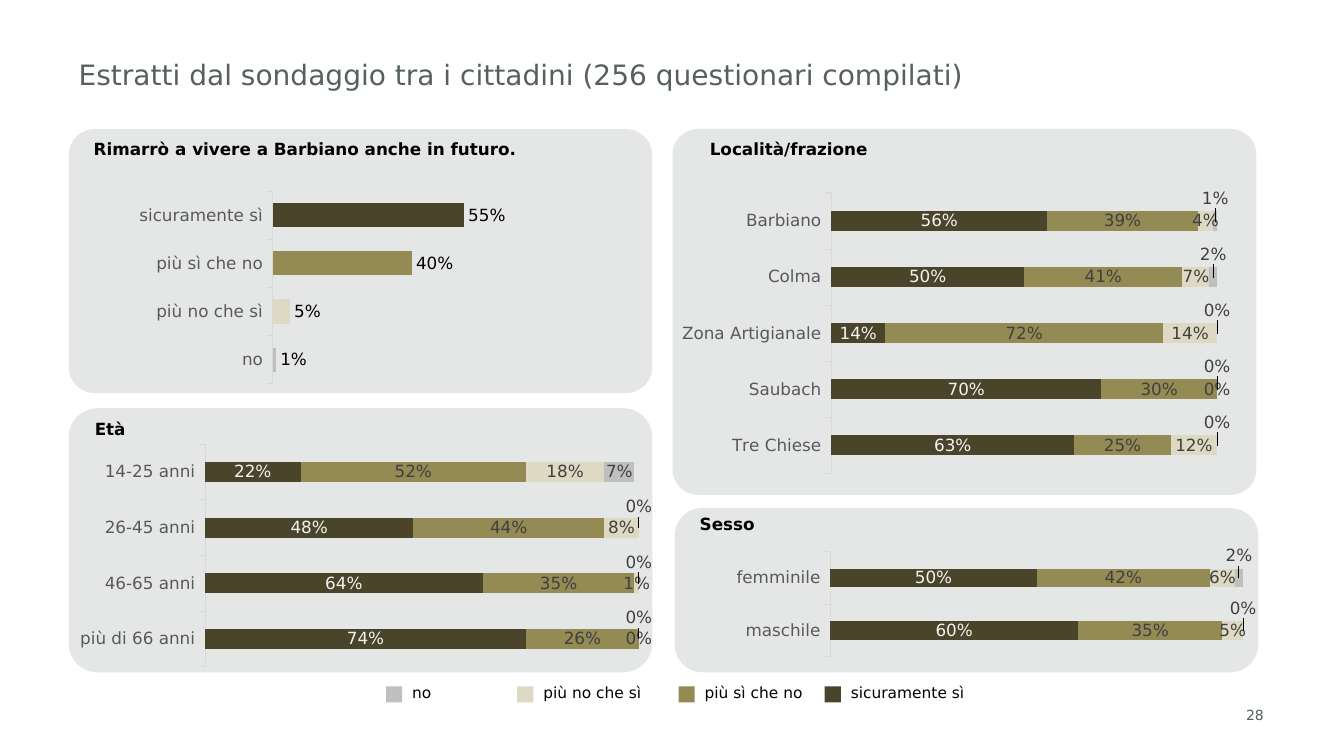
"""Builds the slide with the results of the citizens' survey."""
from dataclasses import dataclass

from lxml import etree
from pptx import Presentation
from pptx import util as u
from pptx.chart.data import CategoryChartData
from pptx.dml.color import RGBColor
from pptx.enum import chart as ch, shapes, text
from pptx.oxml import parse_xml
from pptx.oxml.ns import nsdecls, qn


@dataclass(frozen=True)
class Theme:
    """Colours, type sizes and grid unit of the slide."""
    font: str = "DejaVu Sans"
    slate: str = "56615A"
    black: str = "000000"
    axis_text: str = "595959"
    axis_line: str = "D9D9D9"
    light_label: str = "F2F2F2"
    dark_label: str = "404040"
    title: int = 20
    body: int = 12
    legend: int = 11
    small: int = 10
    cell: int = u.Inches(0.1)
    label_lift: float = 2.1


THEME = Theme()
ANSWERS = {"sicuramente sì": "4A452A", "più sì che no": "948A54",
           "più no che sì": "DDD9C3", "no": "BFBFBF"}


def grid(*cells):
    """Turn grid columns and rows into lengths."""
    return [u.Emu(round(count * THEME.cell)) for count in cells]


def style(font, size, color, bold=None):
    """Apply the theme's typeface with a size and a colour."""
    font.name, font.size, font.bold = THEME.font, u.Pt(size), bold
    font.color.rgb = RGBColor.from_string(color)


def write(frame, words, size, color, bold=None):
    """Write one run into the first paragraph of a frame."""
    span = frame.paragraphs[0].add_run()
    span.text = words
    style(span.font, size, color, bold)


def add_text(page, area, words, size, color, bold=None, inset=True, wrap=True):
    """Add a text box and return its frame."""
    frame = page.shapes.add_textbox(*grid(*area)).text_frame
    frame.word_wrap = wrap
    if not inset:
        frame.margin_left = frame.margin_right = frame.margin_top = frame.margin_bottom = 0
    write(frame, words, size, color, bold)
    return frame


def add_block(page, kind, area, color):
    """Add a flat filled shape without outline."""
    box = page.shapes.add_shape(kind, *grid(*area))
    box.shadow.inherit = False
    box.line.fill.background()
    box.fill.solid()
    box.fill.fore_color.rgb = RGBColor.from_string(color)
    return box


def add_panel(page, area, radius, heading, heading_area):
    """Add a translucent rounded panel with its heading."""
    panel = add_block(page, shapes.MSO_SHAPE.ROUNDED_RECTANGLE, area, THEME.slate)
    panel.adjustments[0] = radius
    tint = panel._element.spPr.find(".//" + qn("a:srgbClr"))
    etree.SubElement(tint, qn("a:alpha")).set("val", "15000")
    add_text(page, heading_area, heading, THEME.body, THEME.black, True, inset=False)


def layout_xml(inner, **places):
    """Return a manual chart layout element."""
    target = '<c:layoutTarget val="inner"/><c:xMode val="edge"/><c:yMode val="edge"/>' if inner else ""
    values = "".join(f'<c:{key} val="{value}"/>' for key, value in places.items())
    return parse_xml(f'<c:layout {nsdecls("c")}><c:manualLayout>{target}{values}'
                     '</c:manualLayout></c:layout>')


def add_bars(page, area, plot_area, kind, cats, series, gap, top=1):
    """Add a bar chart with a hidden value axis and return it."""
    data = CategoryChartData(number_format="0%")
    data.categories = cats
    for name, percents in series.items():
        data.add_series(name, [percent / 100 for percent in percents])
    chart = page.shapes.add_chart(kind, *grid(*area), data).chart
    style(chart.font, THEME.small, THEME.black)
    chart.has_title = chart.has_legend = False
    values, names = chart.value_axis, chart.category_axis
    values.minimum_scale, values.maximum_scale = 0, top
    values.has_major_gridlines = values.visible = False
    names.major_tick_mark = ch.XL_TICK_MARK.OUTSIDE
    names.format.line.color.rgb = RGBColor.from_string(THEME.axis_line)
    names.format.line.width = u.Pt(0.75)
    style(names.tick_labels.font, THEME.body, THEME.axis_text)
    plot = chart.plots[0]
    plot.gap_width, plot.vary_by_categories = gap, False
    root = chart._chartSpace
    root.find(qn("c:chart")).addnext(
        parse_xml(f'<c:spPr {nsdecls("c", "a")}><a:noFill/><a:ln><a:noFill/></a:ln></c:spPr>'))
    plot_element = root.find(".//" + qn("c:plotArea"))
    for old in plot_element.findall(qn("c:layout")):
        plot_element.remove(old)
    plot_element.insert(0, layout_xml(True, **dict(zip("xywh", plot_area))))
    return chart


def paint(part, color):
    """Fill a series or a point with a colour."""
    part.format.fill.solid()
    part.format.fill.fore_color.rgb = RGBColor.from_string(color)


def label(series, color, position):
    """Show the values of a series as percentages."""
    labels = series.data_labels
    labels.show_value = True
    labels.number_format, labels.number_format_is_linked = "0%", False
    labels.position = position
    style(labels.font, THEME.body, color)


def lift_labels(series, count, height):
    """Raise the first labels of a series above their bars."""
    for index in range(count):
        tag = series.points[index].data_label
        style(tag.font, THEME.body, THEME.dark_label)
        tag.position = ch.XL_LABEL_POSITION.CENTER
    for element in series._element.iter(qn("c:dLbl")):
        element.insert(1, layout_xml(False, x=0, y=round(-THEME.label_lift / height, 2)))


def add_breakdown(page, area, plot_area, groups, lifted):
    """Add a stacked chart of the four answers for each group."""
    series = dict(zip(ANSWERS, zip(*groups.values())))
    chart = add_bars(page, area, plot_area, ch.XL_CHART_TYPE.BAR_STACKED, list(groups), series, 182)
    chart.plots[0].overlap = 100
    for index, (bars, color) in enumerate(zip(chart.plots[0].series, ANSWERS.values())):
        paint(bars, color)
        label(bars, THEME.dark_label if index else THEME.light_label, ch.XL_LABEL_POSITION.CENTER)
    lift_labels(bars, lifted, area[3])


def add_overall(page, area, plot_area, percents):
    """Add the chart of all answers, one colour each."""
    cats = list(reversed(ANSWERS))
    chart = add_bars(page, area, plot_area, ch.XL_CHART_TYPE.BAR_CLUSTERED, cats,
                     {"Risposte": percents}, 100, 0.8)
    bars = chart.plots[0].series[0]
    for index, answer in enumerate(cats):
        paint(bars.points[index], ANSWERS[answer])
    label(bars, THEME.black, ch.XL_LABEL_POSITION.OUTSIDE_END)


def add_key(page, left, width, answer):
    """Add a legend swatch with its answer."""
    add_block(page, shapes.MSO_SHAPE.RECTANGLE, (left, 68.1, 1.6, 1.6), ANSWERS[answer])
    add_text(page, (left + 1.6, 67.3, width, 2.9), answer, THEME.legend, THEME.black, wrap=False)


def add_title(page, area, words):
    """Place and fill the title placeholder."""
    title = page.shapes.title
    title.left, title.top, title.width, title.height = grid(*area)
    frame = title.text_frame
    frame.auto_size, frame.vertical_anchor = text.MSO_AUTO_SIZE.NONE, text.MSO_ANCHOR.TOP
    frame.paragraphs[0].alignment = text.PP_ALIGN.LEFT
    write(frame, words, THEME.title, THEME.slate)


def main():
    """Build and save the slide."""
    deck = Presentation()
    deck.slide_width, deck.slide_height = u.Inches(13.33), u.Inches(7.5)
    page = deck.slides.add_slide(deck.slide_layouts[5])
    add_title(page, (6.8, 5.2, 113.2, 3.9),
              "Estratti dal sondaggio tra i cittadini (256 questionari compilati)")
    number = add_text(page, (122.6, 69, 7.2, 3.8), "28", THEME.small, THEME.slate)
    number.vertical_anchor = text.MSO_ANCHOR.MIDDLE
    add_panel(page, (6.8, 12.8, 57.9, 26.2), 0.1,
              "Rimarrò a vivere a Barbiano anche in futuro.", (9.3, 13.8, 55.4, 2.2))
    add_panel(page, (66.7, 12.8, 57.9, 36.3), 0.07, "Località/frazione", (70.4, 13.8, 50.9, 2.2))
    add_panel(page, (6.8, 40.5, 57.9, 26.2), 0.11, "Età", (9.4, 41.5, 55.4, 2.2))
    add_panel(page, (66.9, 50.4, 57.9, 16.3), 0.17, "Sesso", (69.4, 51, 55.4, 3.5))
    add_overall(page, (6.8, 16.9, 57.9, 22.1), (0.35, 0.094, 0.477, 0.864), (1, 5, 40, 55))
    add_breakdown(page, (66.7, 17, 57.9, 32.1), (0.272, 0.067, 0.661, 0.867), {
        "Tre Chiese": (63, 25, 12, 0), "Saubach": (70, 30, 0, 0),
        "Zona Artigianale": (14, 72, 14, 0), "Colma": (50, 41, 7, 2),
        "Barbiano": (56, 39, 4, 1)}, 5)
    add_breakdown(page, (6.8, 43.7, 57.9, 22.9), (0.234, 0.017, 0.743, 0.963), {
        "più di 66 anni": (74, 26, 0, 0), "46-65 anni": (64, 35, 1, 0),
        "26-45 anni": (48, 44, 8, 0), "14-25 anni": (22, 52, 18, 7)}, 3)
    add_breakdown(page, (66.9, 53.2, 57.9, 13.5), (0.267, 0.113, 0.707, 0.773), {
        "maschile": (60, 35, 5, 0), "femminile": (50, 42, 6, 2)}, 2)
    for left, width, answer in zip((38.3, 51.3, 67.3, 81.8), (3.9, 11.9, 11.9, 13.3),
                                   reversed(ANSWERS)):
        add_key(page, left, width, answer)
    deck.save("out.pptx")


if __name__ == "__main__":
    main()
